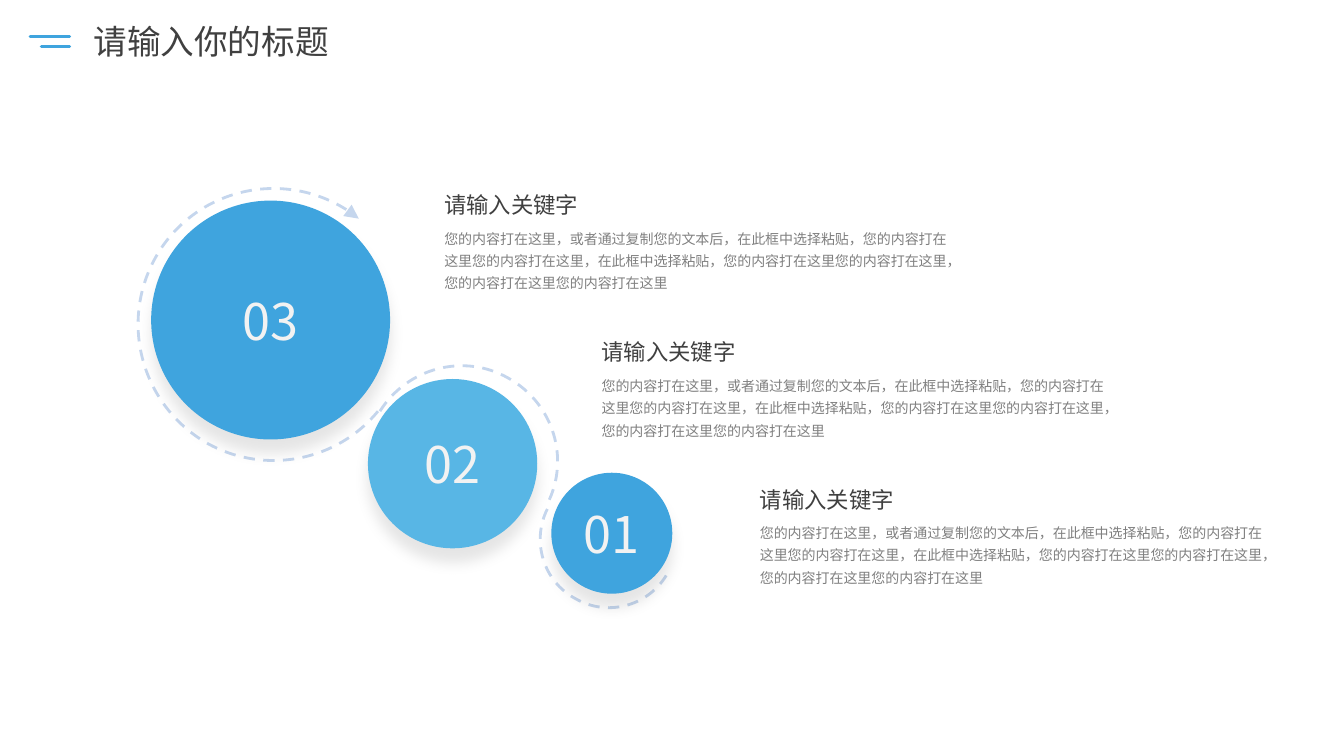
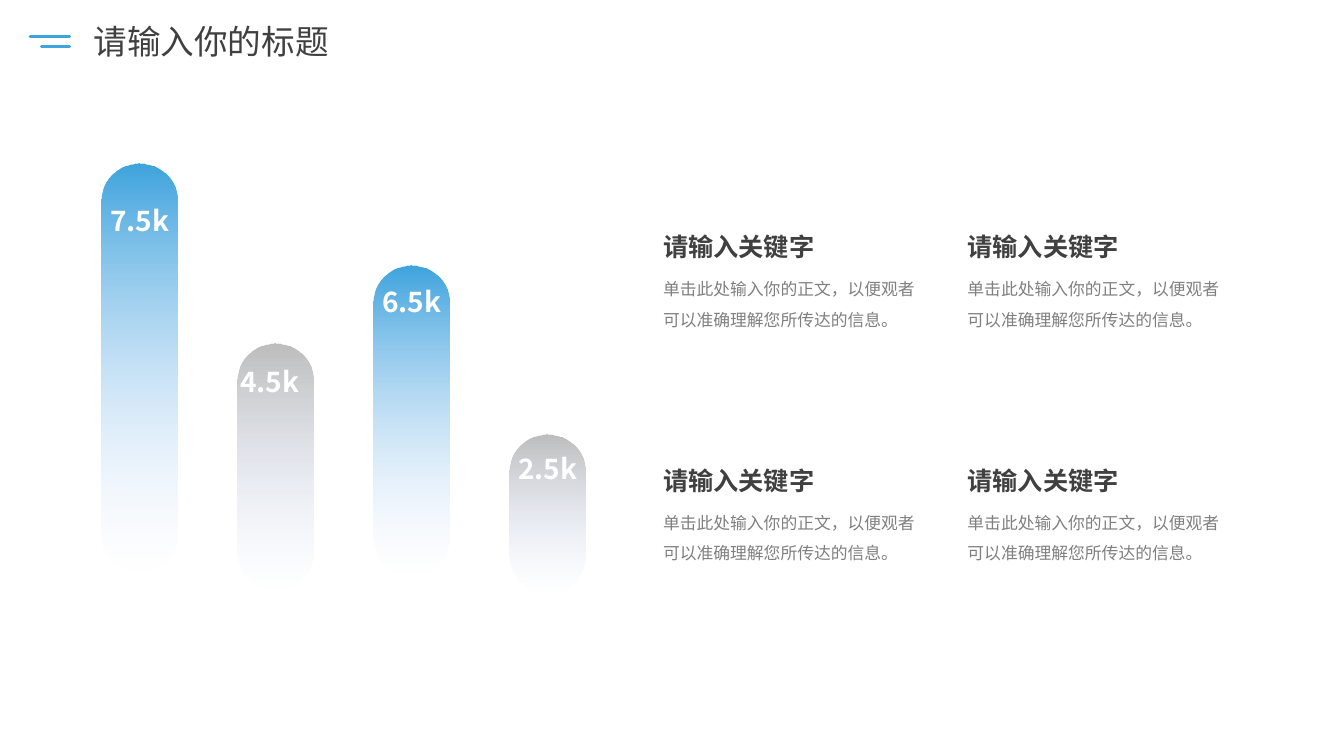
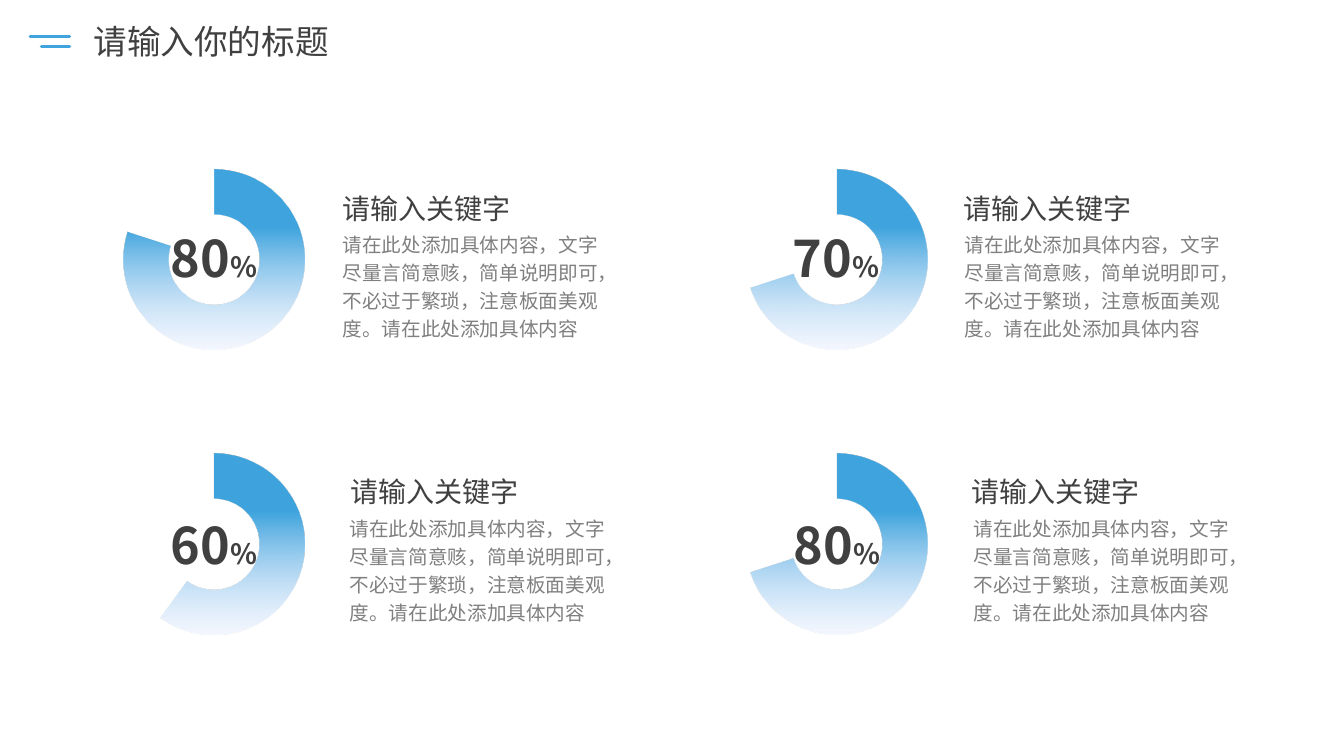
"""Build three infographic slides: stepped circles, fading bars and ring gauges."""
from dataclasses import dataclass
from math import cos, radians, sin

from lxml.etree import SubElement
from pptx import Presentation
from pptx.chart.data import CategoryChartData
from pptx.dml.color import RGBColor
from pptx.dml.fill import FillFormat
from pptx.enum.chart import XL_CHART_TYPE as ChartType
from pptx.enum.dml import MSO_LINE as Dash
from pptx.enum.shapes import MSO_CONNECTOR as Connector
from pptx.enum.shapes import MSO_SHAPE as Preset
from pptx.enum.text import MSO_ANCHOR as Anchor
from pptx.enum.text import MSO_AUTO_SIZE as AutoSize
from pptx.enum.text import PP_ALIGN as Align
from pptx.oxml.ns import qn
from pptx.slide import Slide
from pptx.text.text import _Paragraph as Paragraph
from pptx.util import Emu, Length, Pt

EMU_PER_PX = 9144
SLIDE_WIDTH, SLIDE_HEIGHT = Emu(12192000), Emu(6858000)
FONT = "Noto Sans CJK SC"
COLORS = {
    "blue": "3FA4DE",
    "sky": "58B6E5",
    "navy": "2261BB",
    "gray": "BEBEBE",
    "mist": "D9E5FC",
    "dark": "404040",
    "body": "808080",
    "pale": "F2F2F2",
    "white": "FFFFFF",
    "black": "000000",
}
TITLE = "请输入你的标题"
KEYWORD = "请输入关键字"
STEP_TEXT = (
    "您的内容打在这里，或者通过复制您的文本后，在此框中选择粘贴，您的内容打在这里"
    "您的内容打在这里，在此框中选择粘贴，您的内容打在这里您的内容打在这里，"
    "您的内容打在这里您的内容打在这里"
)
CARD_TEXT = "单击此处输入你的正文，以便观者可以准确理解您所传达的信息。"
GAUGE_TEXT = (
    "请在此处添加具体内容，文字尽量言简意赅，简单说明即可，"
    "不必过于繁琐，注意板面美观度。请在此处添加具体内容"
)


@dataclass(frozen=True)
class Style:
    size: int
    color: str
    bold: bool = False
    align: Align = Align.LEFT
    spacing: float | Length | None = None


@dataclass(frozen=True)
class Curve:
    left: int
    top: int
    width: int
    height: int
    points: tuple[tuple[int, int], ...]
    arrow: bool = False


@dataclass(frozen=True)
class Circle:
    number: str
    left: int
    top: int
    size: int
    color: str


@dataclass(frozen=True)
class Bar:
    label: str
    top: int
    height: int
    label_top: int
    color: str
    label_shift: int = -9


@dataclass(frozen=True)
class Gauge:
    share: int
    label: str
    left: int
    top: int
    heading_left: int
    body_left: int
    heading_top: int
    label_left: int
    label_top: int


TITLE_STYLE = Style(24, "dark")
NUMBER_STYLE = Style(36, "pale", align=Align.CENTER)
STEP_HEADING = Style(16, "dark")
STEP_BODY = Style(10, "body", spacing=Pt(16))
BAR_LABEL = Style(20, "white", bold=True, align=Align.CENTER)
CARD_HEADING = Style(18, "dark", bold=True)
CARD_BODY = Style(12, "body", spacing=1.5)
GAUGE_HEADING = Style(20, "dark")
GAUGE_BODY = Style(14, "body", spacing=Pt(20))
GAUGE_LABEL = Style(36, "dark", bold=True, align=Align.CENTER)

CURVE_TILT = 29.1
CURVES = [
    Curve(137, 187, 267, 269, (
        (375, 408), (335, 457), (264, 472), (206, 440), (141, 403),
        (118, 321), (154, 256), (190, 191), (272, 168), (337, 204),
        (344, 208), (350, 212), (356, 217)), arrow=True),
    Curve(387, 369, 190, 90, (
        (377, 408), (404, 365), (460, 350), (504, 375), (549, 400),
        (566, 455), (543, 500))),
    Curve(519, 534, 135, 64, (
        (543, 505), (527, 537), (539, 577), (571, 594), (602, 612),
        (642, 602), (661, 571))),
]
CIRCLES = [
    Circle("03", 150, 199, 237, "blue"),
    Circle("02", 365, 376, 168, "sky"),
    Circle("01", 547, 469, 120, "blue"),
]
BARS = [
    Bar("7.5k", 162, 405, 197, "blue"),
    Bar("4.5k", 341, 244, 357, "gray", label_shift=-15),
    Bar("6.5k", 263, 307, 277, "blue"),
    Bar("2.5k", 431, 157, 443, "gray"),
]
GAUGES = [
    Gauge(80, "80", 89, 154, 330, 330, 185, 138, 220),
    Gauge(70, "70", 707, 154, 946, 947, 185, 755, 220),
    Gauge(60, "60", 89, 436, 338, 337, 466, 138, 505),
    Gauge(70, "80", 707, 436, 954, 956, 466, 756, 505),
]


def px(value: float) -> Emu:
    return Emu(round(value * EMU_PER_PX))


def rgb(name: str) -> RGBColor:
    return RGBColor.from_string(COLORS[name])


def set_alpha(parent, percent: int) -> None:
    color = next(parent.iter(qn("a:srgbClr")))
    SubElement(color, qn("a:alpha"), val=str(percent * 1000))


def fade_down(fill: FillFormat, color: str, start: int, end_alpha: int) -> None:
    fill.gradient()
    fill.gradient_angle = 270
    first, last = fill.gradient_stops
    first.position, last.position = start / 100, 1
    first.color.rgb, last.color.rgb = rgb(color), rgb("mist")
    set_alpha(last._gs, end_alpha)


def style_paragraph(para: Paragraph, style: Style) -> None:
    para.alignment = style.align
    if style.spacing is not None:
        para.line_spacing = style.spacing
    font = para.font
    font.name, font.size, font.bold = FONT, Pt(style.size), style.bold
    font.color.rgb = rgb(style.color)
    properties = para._p.get_or_add_pPr().find(qn("a:defRPr"))
    SubElement(properties, qn("a:ea"), typeface=FONT)


def add_text(slide: Slide, text: str, left: int, top: int, width: int,
             height: int, style: Style) -> Paragraph:
    box = slide.shapes.add_textbox(px(left), px(top), px(width), px(height))
    frame = box.text_frame
    frame.word_wrap = True
    frame.auto_size = AutoSize.SHAPE_TO_FIT_TEXT
    para = frame.paragraphs[0]
    para.add_run().text = text
    style_paragraph(para, style)
    return para


def add_header(slide: Slide) -> None:
    for left, top in ((41, 46), (30, 36)):
        rule = slide.shapes.add_connector(
            Connector.STRAIGHT, px(left), px(top), px(69), px(top))
        rule.line.color.rgb = rgb("blue")
        rule.line.width = Pt(2.25)
        rule.line._get_or_add_ln().set("cap", "rnd")
        SubElement(rule._element.spPr, qn("a:effectLst"))
    add_text(slide, TITLE, 83, 16, 357, 50, TITLE_STYLE)


def untilt(curve: Curve, point: tuple[int, int]) -> tuple[Emu, Emu]:
    across = point[0] - curve.left - curve.width / 2
    down = point[1] - curve.top - curve.height / 2
    cosine, sine = cos(radians(CURVE_TILT)), sin(radians(CURVE_TILT))
    return (px(curve.width / 2 + across * cosine + down * sine),
            px(curve.height / 2 + down * cosine - across * sine))


def add_curve(slide: Slide, curve: Curve) -> None:
    builder = slide.shapes.build_freeform(px(curve.left), px(curve.top))
    builder.add_line_segments(
        [(px(curve.left + curve.width), px(curve.top + curve.height))],
        close=False)
    outline = builder.convert_to_shape()
    outline.rotation = CURVE_TILT
    track = next(outline._element.iter(qn("a:path")))
    track.remove(track.find(qn("a:lnTo")))
    start, *controls = [untilt(curve, point) for point in curve.points]
    origin = track.find(qn("a:moveTo")).find(qn("a:pt"))
    origin.set("x", str(start[0]))
    origin.set("y", str(start[1]))
    for index in range(0, len(controls), 3):
        bend = SubElement(track, qn("a:cubicBezTo"))
        for across, down in controls[index:index + 3]:
            SubElement(bend, qn("a:pt"), x=str(across), y=str(down))
    outline.shadow.inherit = False
    outline.fill.background()
    outline.line.color.rgb = rgb("navy")
    outline.line.width = Pt(2)
    outline.line.dash_style = Dash.DASH
    line = outline.line._get_or_add_ln()
    set_alpha(line, 26)
    if curve.arrow:
        SubElement(line, qn("a:tailEnd"), type="triangle", w="lg", len="lg")


def add_circle(slide: Slide, circle: Circle) -> None:
    size = px(circle.size)
    disc = slide.shapes.add_shape(
        Preset.OVAL, px(circle.left), px(circle.top), size, size)
    disc.fill.solid()
    disc.fill.fore_color.rgb = rgb(circle.color)
    disc.line.fill.background()
    disc.shadow.inherit = False
    effects = disc._element.spPr.find(qn("a:effectLst"))
    shadow = SubElement(effects, qn("a:outerShdw"), blurRad=str(Pt(10)),
                        dist=str(Pt(10)), dir=str(90 * 60000), algn="t",
                        rotWithShape="0")
    SubElement(shadow, qn("a:srgbClr"), val=COLORS["black"])
    set_alpha(shadow, 10)
    frame = disc.text_frame
    frame.vertical_anchor = Anchor.MIDDLE
    para = frame.paragraphs[0]
    para.add_run().text = circle.number
    style_paragraph(para, NUMBER_STYLE)


def add_bar(slide: Slide, bar: Bar, left: int) -> None:
    column = slide.shapes.add_shape(
        Preset.ROUNDED_RECTANGLE, px(left), px(bar.top), px(75), px(bar.height))
    column.adjustments[0] = 0.5
    column.shadow.inherit = False
    column.line.fill.background()
    fade_down(column.fill, bar.color, 0, 0)
    add_text(slide, bar.label, left + bar.label_shift, bar.label_top, 93, 44,
             BAR_LABEL)


def add_gauge(slide: Slide, gauge: Gauge) -> None:
    data = CategoryChartData()
    data.categories = ["1", "2"]
    data.add_series("Series 1", (gauge.share, 100 - gauge.share))
    chart = slide.shapes.add_chart(
        ChartType.DOUGHNUT, px(gauge.left), px(gauge.top), px(246), px(207),
        data).chart
    chart.has_legend = False
    chart.has_title = False
    chart.font.name, chart.font.size = FONT, Pt(10)
    chart.font.color.rgb = rgb("black")
    plot = chart.plots[0]
    plot.vary_by_categories = True
    plot._element.find(qn("c:holeSize")).set("val", "75")
    filled, rest = (plot.series[0].points[index].format for index in range(2))
    fade_down(filled.fill, "blue", 32, 30)
    rest.fill.solid()
    rest.fill.fore_color.rgb = rgb("white")
    for part in (filled, rest):
        part.line.fill.background()
    add_text(slide, KEYWORD, gauge.heading_left, gauge.heading_top, 288, 44,
             GAUGE_HEADING)
    add_text(slide, GAUGE_TEXT, gauge.body_left, gauge.heading_top + 37, 277,
             122, GAUGE_BODY)
    label = add_text(slide, gauge.label, gauge.label_left, gauge.label_top,
                     149, 70, GAUGE_LABEL)
    span = label.add_run()
    span.text = "%"
    span.font.size = Pt(20)


def build_steps(slide: Slide) -> None:
    for curve in CURVES:
        add_curve(slide, curve)
    for circle in CIRCLES:
        add_circle(slide, circle)
    for index in range(len(CIRCLES)):
        left, top = 431 + 313 * index // 2, 185 + 146 * index
        add_text(slide, STEP_TEXT, left, top + 33, 523, 77, STEP_BODY)
        add_text(slide, KEYWORD, left, top, 174, 37, STEP_HEADING)


def build_bars(slide: Slide) -> None:
    for index, bar in enumerate(BARS):
        add_bar(slide, bar, 101 + 135 * index)
    for left in (648, 950):
        for top in (225, 457):
            add_text(slide, KEYWORD, left, top, 292, 40, CARD_HEADING)
            add_text(slide, CARD_TEXT, left, top + 37, 280, 67, CARD_BODY)


def build_gauges(slide: Slide) -> None:
    for gauge in GAUGES:
        add_gauge(slide, gauge)


def main() -> None:
    deck = Presentation()
    deck.slide_width, deck.slide_height = SLIDE_WIDTH, SLIDE_HEIGHT
    for build in (build_steps, build_bars, build_gauges):
        page = deck.slides.add_slide(deck.slide_layouts[6])
        add_header(page)
        build(page)
    deck.save("out.pptx")


if __name__ == "__main__":
    main()
